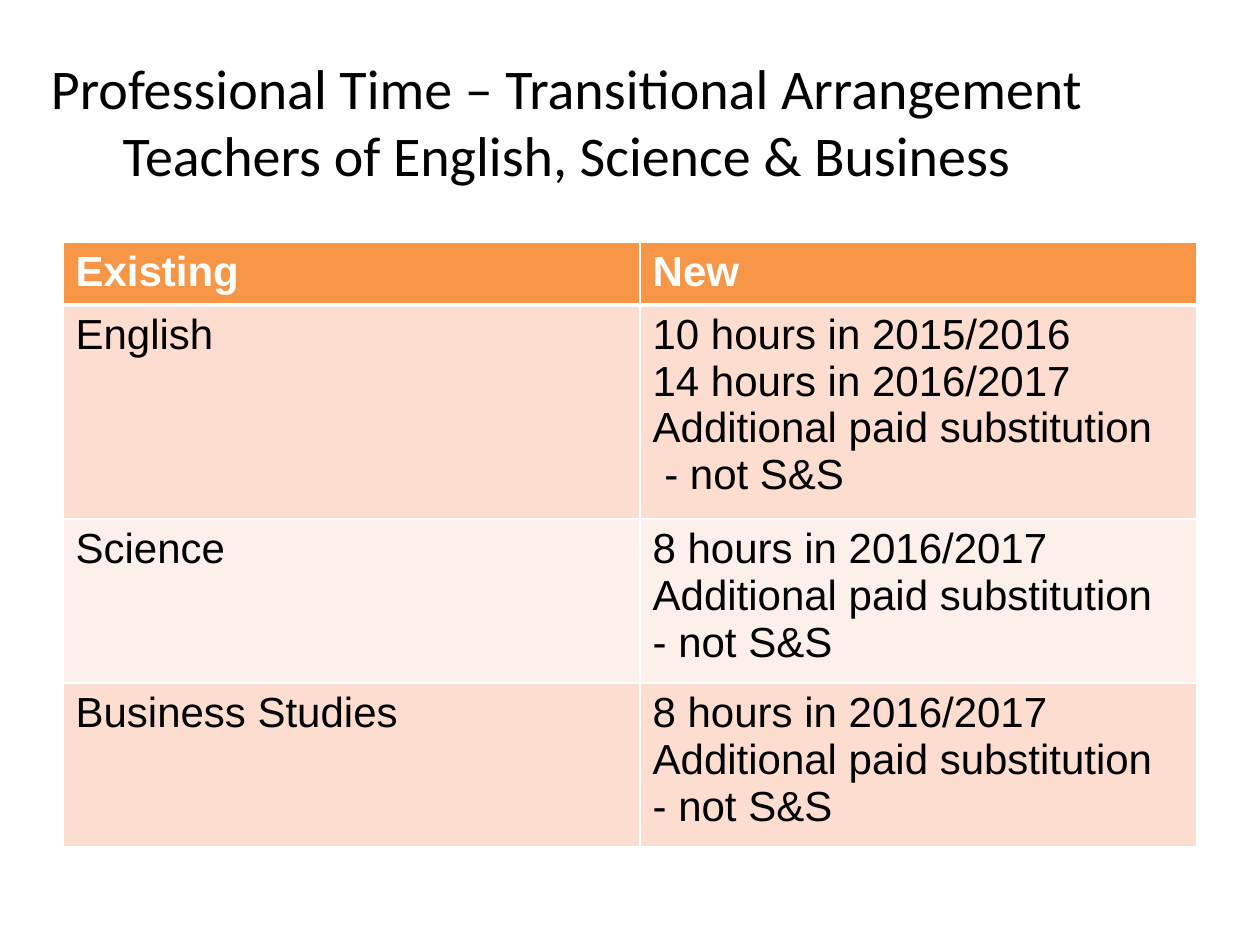
from dataclasses import dataclass

from lxml import etree
from pptx import Presentation
from pptx.dml.color import RGBColor
from pptx.enum.text import MSO_ANCHOR, PP_ALIGN
from pptx.oxml.ns import qn
from pptx.util import Inches, Pt

CENTER = PP_ALIGN.CENTER
MIDDLE = MSO_ANCHOR.MIDDLE


@dataclass(frozen=True)
class Theme:
    title_font: str = "Calibri"
    body_font: str = "Arial"
    title_size: int = 32
    body_size: int = 24
    text: str = "000000"
    white: str = "FFFFFF"
    header: str = "F79646"
    bands: tuple = ("FCDDCF", "FDEFE9")
    rule: int = 1
    header_rule: int = 3


THEME = Theme()

TITLE = ("Professional Time – Transitional Arrangement\v"
         "Teachers of English, Science & Business")
ROWS = [
    ("Existing", "New"),
    ("English", "10 hours in 2015/2016\n14 hours in 2016/2017\n"
                "Additional paid substitution\n - not S&S"),
    ("Science", "8 hours in 2016/2017\nAdditional paid substitution\n- not S&S"),
    ("Business Studies", "8 hours in 2016/2017\nAdditional paid substitution\n- not S&S"),
]
COLUMN_WIDTHS = (4.58, 4.42)
ROW_HEIGHTS = (0.47, 1.59, 1.21, 1.21)


def format_text(tf, font, size, color, bold=False):
    for p in tf.paragraphs:
        for r in p.runs:
            r.font.name = font
            r.font.size = Pt(size)
            r.font.bold = bold
            r.font.color.rgb = RGBColor.from_string(color)


def set_borders(cell, color, widths):
    """Draw cell borders; widths are points for left, right, top, bottom."""
    tcPr = cell._tc.get_or_add_tcPr()
    for side, width in zip("LRTB", widths):
        ln = etree.SubElement(tcPr, qn(f"a:ln{side}"), w=str(Pt(width)))
        fill = etree.SubElement(ln, qn("a:solidFill"))
        etree.SubElement(fill, qn("a:srgbClr"), val=color)


def add_title(slide, left, top, width, height):
    box = slide.shapes.add_textbox(left, top, width, height)
    tf = box.text_frame
    tf.word_wrap = True
    tf.vertical_anchor = MIDDLE
    tf.text = TITLE
    tf.paragraphs[0].alignment = CENTER
    format_text(tf, THEME.title_font, THEME.title_size, THEME.text)


def add_hours_table(slide, left, top, width, height):
    table = slide.shapes.add_table(
        len(ROWS), len(COLUMN_WIDTHS), left, top, width, height).table
    for column, size in zip(table.columns, COLUMN_WIDTHS):
        column.width = Inches(size)
    for row, size in zip(table.rows, ROW_HEIGHTS):
        row.height = Inches(size)

    for i, texts in enumerate(ROWS):
        is_header = i == 0
        fill = THEME.header if is_header else THEME.bands[(i - 1) % 2]
        color = THEME.white if is_header else THEME.text
        top_rule = THEME.header_rule if i == 1 else THEME.rule
        bottom_rule = THEME.header_rule if is_header else THEME.rule
        for j, text in enumerate(texts):
            cell = table.cell(i, j)
            cell.text_frame.text = text
            format_text(cell.text_frame, THEME.body_font, THEME.body_size,
                        color, bold=is_header)
            set_borders(cell, THEME.white,
                        (THEME.rule, THEME.rule, top_rule, bottom_rule))
            cell.fill.solid()
            cell.fill.fore_color.rgb = RGBColor.from_string(fill)


def main():
    prs = Presentation()
    prs.slide_width = Inches(10)
    prs.slide_height = Inches(7.5)
    slide = prs.slides.add_slide(prs.slide_layouts[6])
    add_title(slide, Inches(0), Inches(0.33), Inches(9), Inches(1.25))
    add_hours_table(slide, Inches(0.5), Inches(1.92),
                    Inches(sum(COLUMN_WIDTHS)), Inches(sum(ROW_HEIGHTS)))
    prs.save("out.pptx")


if __name__ == "__main__":
    main()
